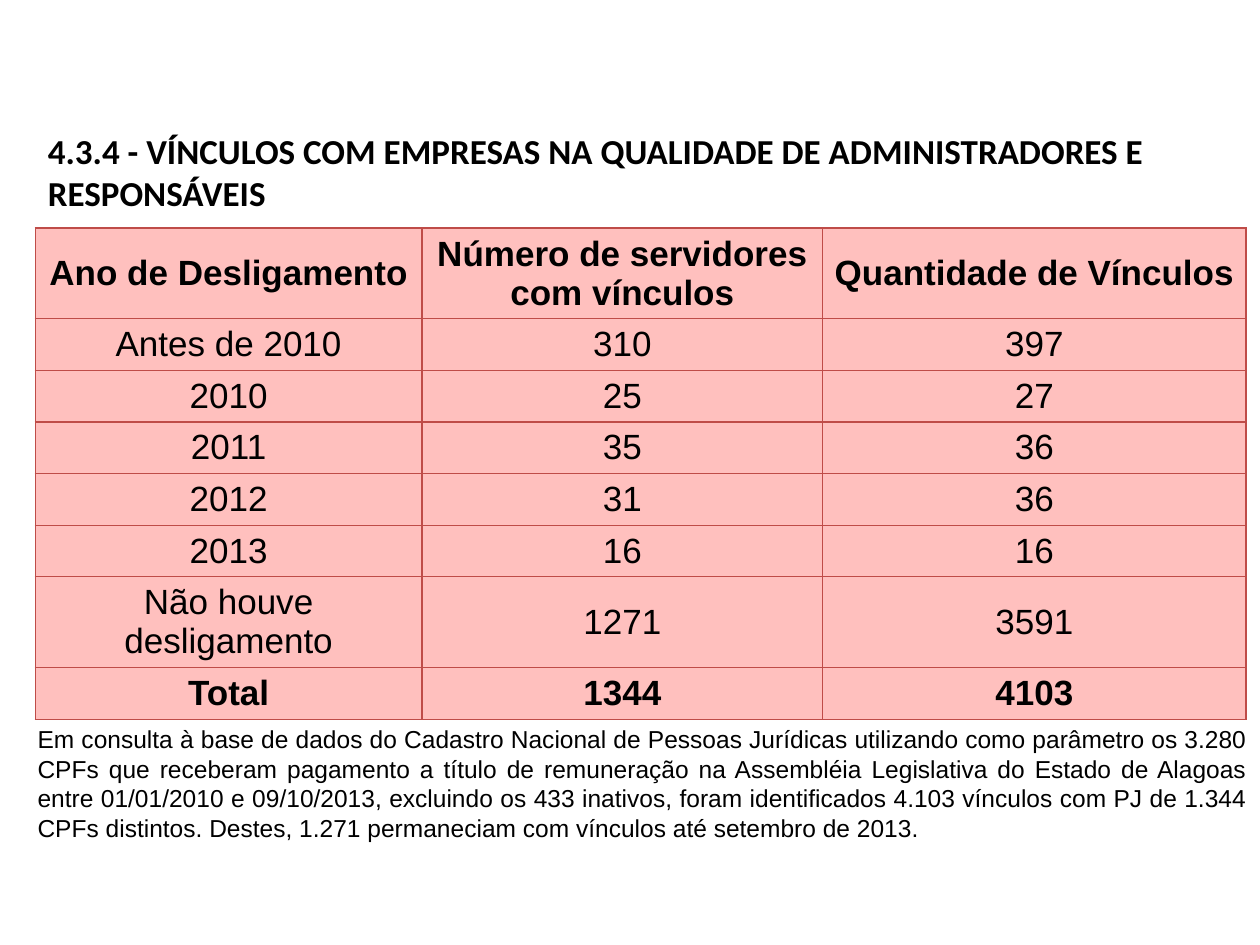
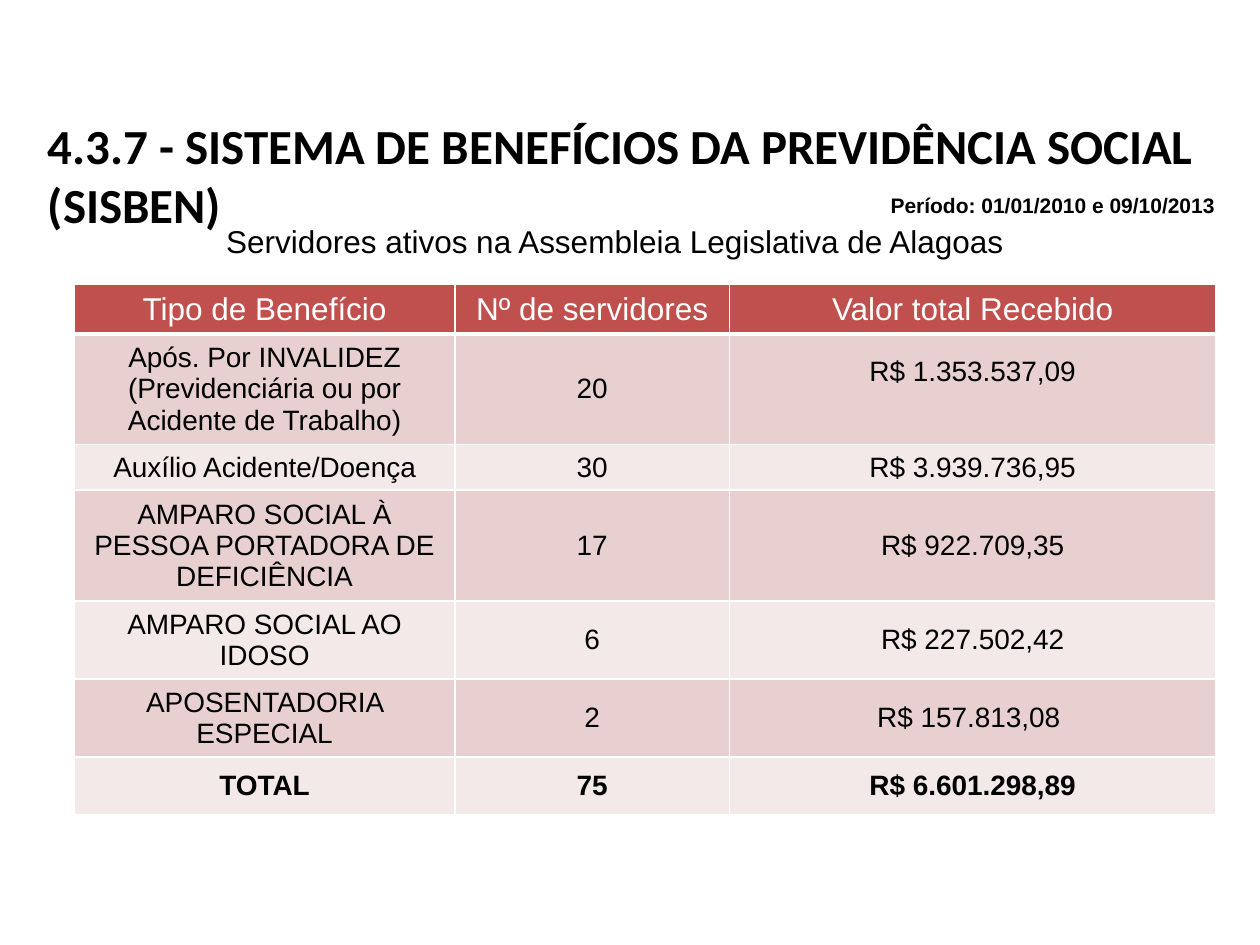
from dataclasses import dataclass

from lxml.etree import SubElement
from pptx import Presentation
from pptx.dml.color import RGBColor
from pptx.enum.text import MSO_ANCHOR as Anchor, MSO_AUTO_SIZE as AutoSize, PP_ALIGN as Align
from pptx.oxml.ns import qn
from pptx.slide import Slide
from pptx.text.text import TextFrame
from pptx.util import Inches, Pt

COLORS = {
    "text": "000000",
    "white": "FFFFFF",
    "pink": "FFC0BE",
    "crimson": "BF4C48",
    "header": "C0504D",
    "band_dark": "E8D0D0",
    "band_light": "F4E9E9",
}
TITLE_FONT = "Calibri"
BODY_FONT = "Arial"
TITLE_ONLY = 5


@dataclass(frozen=True)
class Box:
    left: float
    top: float
    width: float
    height: float

    def lengths(self) -> list[int]:
        return [Inches(v) for v in (self.left, self.top, self.width, self.height)]


@dataclass(frozen=True)
class TableLook:
    header_fill: str
    bands: tuple[str, ...]
    border: str
    border_width: float
    header_rule: float
    header_color: str
    header_size: float
    header_bold: bool
    body_size: float
    side_margin: float
    edge_margin: float


@dataclass(frozen=True)
class Note:
    text: str
    box: Box
    size: float
    align: Align = Align.LEFT
    bold: bool = False
    wrap: bool = True


@dataclass(frozen=True)
class TableData:
    left: float
    top: float
    columns: tuple[float, ...]
    heights: tuple[float, ...]
    rows: tuple[tuple[str, ...], ...]
    look: TableLook


OUTLINED = TableLook("pink", ("pink",), "crimson", 0.75, 0.75,
                     "text", 20, True, 20, 0.05, 0.04)
BANDED = TableLook("header", ("band_dark", "band_light"), "white", 1, 3,
                   "white", 18, False, 16, 0.1, 0.05)

COMPANY_TIES = TableData(
    0.28, 1.81, (3.07, 3.18, 3.36),
    (0.72, *[0.41] * 5, 0.72, 0.41),
    (
        ("Ano de Desligamento", "Número de servidores com vínculos", "Quantidade de Vínculos"),
        ("Antes de 2010", "310", "397"),
        ("2010", "25", "27"),
        ("2011", "35", "36"),
        ("2012", "31", "36"),
        ("2013", "16", "16"),
        ("Não houve desligamento", "1271", "3591"),
        ("Total", "1344", "4103"),
    ),
    OUTLINED,
)
BENEFITS = TableData(
    0.59, 2.26, (3.02, 2.18, 3.86),
    (0.39, 0.88, 0.36, 0.88, 0.62, 0.62, 0.46),
    (
        ("Tipo de Benefício", "Nº de servidores", "Valor total Recebido"),
        ("Após. Por INVALIDEZ (Previdenciária ou por Acidente de Trabalho)",
         "20", " R$ 1.353.537,09 "),
        ("Auxílio Acidente/Doença", "30", "R$ 3.939.736,95"),
        ("AMPARO SOCIAL À PESSOA PORTADORA DE DEFICIÊNCIA", "17", "R$ 922.709,35"),
        ("AMPARO SOCIAL AO IDOSO", "6", "R$ 227.502,42"),
        ("APOSENTADORIA ESPECIAL", "2", "R$ 157.813,08 "),
        ("TOTAL", "75", "R$ 6.601.298,89"),
    ),
    BANDED,
)
REGISTRY_NOTE = Note(
    "Em consulta à base de dados do Cadastro Nacional de Pessoas Jurídicas utilizando como "
    "parâmetro os 3.280 CPFs que receberam pagamento a título de remuneração na Assembléia "
    "Legislativa do Estado de Alagoas entre 01/01/2010 e 09/10/2013, excluindo os 433 inativos, "
    "foram identificados 4.103 vínculos com PJ de 1.344 CPFs distintos. Destes, 1.271 "
    "permaneciam com vínculos até setembro de 2013.",
    Box(0.2, 5.7, 9.8, 1.04), 14, Align.JUSTIFY,
)
ACTIVE_STAFF = Note("Servidores ativos na Assembleia Legislativa de Alagoas",
                    Box(0.43, 1.71, 8.9, 0.38), 18, Align.CENTER)
PERIOD = Note("Período: 01/01/2010 e 09/10/2013",
              Box(6.97, 1.48, 2.9, 0.3), 12, bold=True, wrap=False)


def rgb(color: str) -> RGBColor:
    return RGBColor.from_string(COLORS[color])


def write(frame: TextFrame, text: str, *, size: float, font: str = BODY_FONT,
          color: str = "text", bold: bool = False, align: Align = Align.LEFT) -> None:
    paragraph = frame.paragraphs[0]
    paragraph.alignment = align
    run = paragraph.add_run()
    run.text = text
    run.font.name = font
    run.font.size = Pt(size)
    run.font.bold = bold
    run.font.color.rgb = rgb(color)


def add_title(slide: Slide, text: str, box: Box, size: float) -> None:
    title = slide.shapes.title
    title.left, title.top, title.width, title.height = box.lengths()
    frame = title.text_frame
    frame.word_wrap = True
    frame.auto_size = AutoSize.NONE
    frame.vertical_anchor = Anchor.MIDDLE
    write(frame, text, size=size, font=TITLE_FONT, bold=True)


def add_note(slide: Slide, note: Note) -> None:
    frame = slide.shapes.add_textbox(*note.box.lengths()).text_frame
    frame.word_wrap = note.wrap
    frame.auto_size = AutoSize.SHAPE_TO_FIT_TEXT
    write(frame, note.text, size=note.size, bold=note.bold, align=note.align)


def set_borders(cell, color: str, width: float, bottom: float) -> None:
    properties = cell._tc.get_or_add_tcPr()
    for side, points in (("L", width), ("R", width), ("T", width), ("B", bottom)):
        line = SubElement(properties, qn(f"a:ln{side}"), w=str(Pt(points)))
        fill = SubElement(line, qn("a:solidFill"))
        SubElement(fill, qn("a:srgbClr"), val=COLORS[color])


def add_data_table(slide: Slide, data: TableData):
    look = data.look
    box = Box(data.left, data.top, sum(data.columns), sum(data.heights))
    table = slide.shapes.add_table(len(data.rows), len(data.columns), *box.lengths()).table
    for column, width in zip(table.columns, data.columns):
        column.width = Inches(width)
    for index, (row, height, texts) in enumerate(zip(table.rows, data.heights, data.rows)):
        row.height = Inches(height)
        is_header = index == 0
        is_total = index == len(data.rows) - 1
        fill = look.header_fill if is_header else look.bands[(index - 1) % len(look.bands)]
        for cell, text in zip(row.cells, texts):
            cell.vertical_anchor = Anchor.MIDDLE
            cell.margin_left = cell.margin_right = Inches(look.side_margin)
            cell.margin_top = cell.margin_bottom = Inches(look.edge_margin)
            set_borders(cell, look.border, look.border_width,
                        look.header_rule if is_header else look.border_width)
            cell.fill.solid()
            cell.fill.fore_color.rgb = rgb(fill)
            write(cell.text_frame, text, align=Align.CENTER,
                  size=look.header_size if is_header else look.body_size,
                  color=look.header_color if is_header else "text",
                  bold=look.header_bold if is_header else is_total)
    return table


def main() -> None:
    deck = Presentation()
    deck.slide_width, deck.slide_height = Inches(10), Inches(7.5)
    layout = deck.slide_layouts[TITLE_ONLY]

    ties = deck.slides.add_slide(layout)
    add_title(ties, "4.3.4 - VÍNCULOS COM EMPRESAS NA QUALIDADE DE ADMINISTRADORES E RESPONSÁVEIS",
              Box(0.28, 0.93, 9, 0.86), 20)
    add_data_table(ties, COMPANY_TIES)
    add_note(ties, REGISTRY_NOTE)

    benefits = deck.slides.add_slide(layout)
    add_title(benefits, "4.3.7 - SISTEMA DE BENEFÍCIOS DA PREVIDÊNCIA SOCIAL (SISBEN)",
              Box(0.28, 1.07, 9.53, 0.63), 28)
    benefit_table = add_data_table(benefits, BENEFITS)
    disability_value = benefit_table.cell(1, 2)
    disability_value.margin_bottom = Inches(0.32)
    add_note(benefits, ACTIVE_STAFF)
    add_note(benefits, PERIOD)

    deck.save("out.pptx")


if __name__ == "__main__":
    main()
